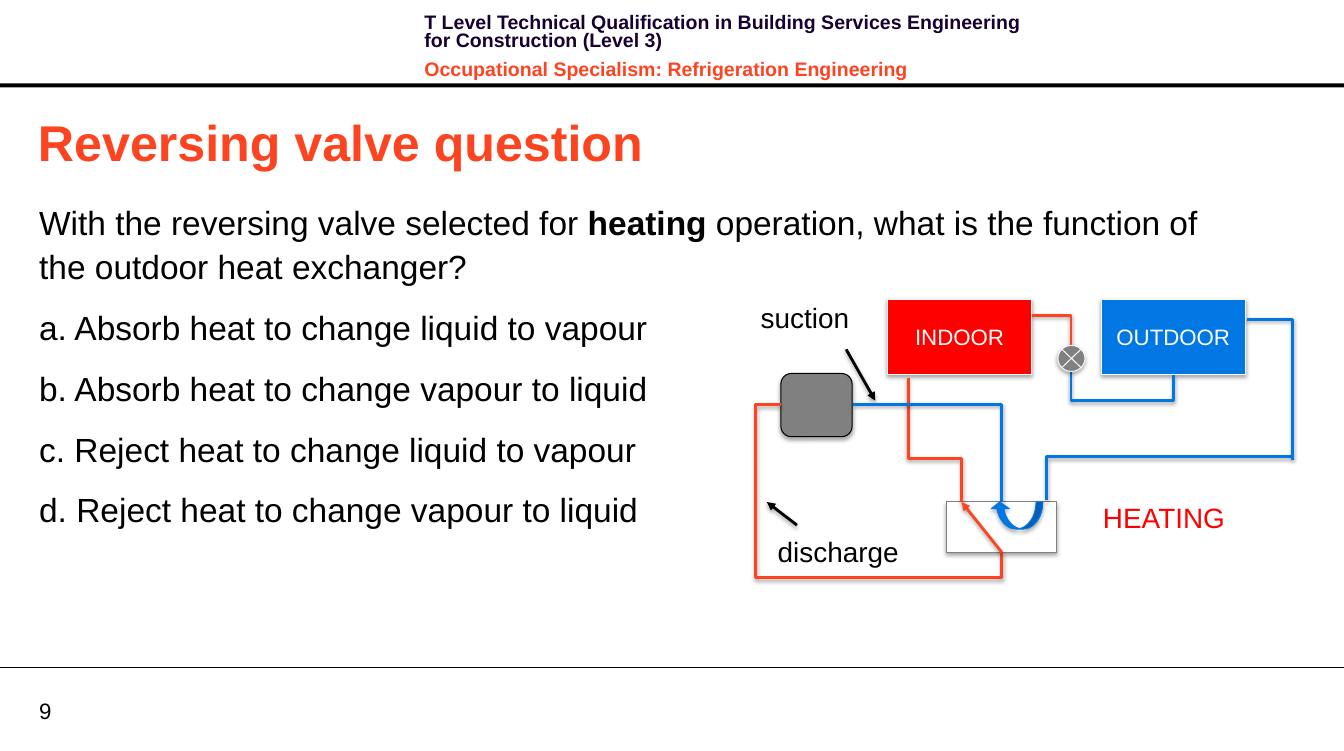
"""Build the reversing valve question slide with its heating circuit diagram."""
from lxml.etree import SubElement
from pptx import Presentation
from pptx.dml.color import RGBColor
from pptx.enum.shapes import MSO_CONNECTOR as Connector, MSO_SHAPE as Shape
from pptx.enum.text import MSO_ANCHOR as Anchor, PP_ALIGN as Align
from pptx.oxml.ns import qn
from pptx.util import Pt

PX = 9144
SLIDE_SIZE = (1339, 748)

THEME = {
    "font": "Arial",
    "colours": {
        "black": "000000", "white": "FFFFFF", "navy": "170130", "orange": "FC4421",
        "blue": "0077E3", "red": "FF0000", "grey": "808080", "pale": "F9F9F9",
    },
    "sizes": {"header": 14, "small": 16, "label": 20, "body": 24, "title": 36},
    "widths": {"thin": 0.75, "pipe": 2},
}

FLUSH = dict.fromkeys(("margin_left", "margin_top", "margin_right", "margin_bottom"), 0)
MIDDLE = {"vertical_anchor": Anchor.MIDDLE}
WRAP = {"word_wrap": True}
HEADER_LINE = {"line_spacing": Pt(13.1), "space_after": Pt(4)}
BODY_LINE = {"line_spacing": 1.1, "space_after": Pt(12)}

QUESTION = [
    [("With the reversing valve selected for ", False), ("heating", True),
     (" operation, what is the function of the outdoor heat exchanger?", False)],
    [("a. Absorb heat to change liquid to vapour", False)],
    [("b. Absorb heat to change vapour to liquid", False)],
    [("c. Reject heat to change liquid to vapour", False)],
    [("d. Reject heat to change vapour to liquid", False)],
]
HEADER = [
    ("T Level Technical Qualification in Building Services Engineering "
     "for Construction (Level 3)", "navy", HEADER_LINE),
    ("Occupational Specialism: Refrigeration Engineering", "orange",
     {**HEADER_LINE, "space_before": Pt(4)}),
]
TEXTS = [
    ((413, 10, 630, 64), WRAP, "header",
     [([(words, True)], colour, layout) for words, colour, layout in HEADER]),
    ((39, 694, 64, 27), {**WRAP, **MIDDLE, **FLUSH}, "small", [([("9", False)], "black", {})]),
    ((28, 105, 1272, 71), {**WRAP, **MIDDLE}, "title",
     [([("Reversing valve question", True)], "orange", {})]),
    ((39, 197, 1209, 396), {**WRAP, **FLUSH}, "body",
     [(runs, "black", BODY_LINE) for runs in QUESTION]),
]
LABELS = [
    ("suction", (748, 295, 109, 44), "black"),
    ("discharge", (765, 528, 142, 44), "black"),
    ("HEATING", (1089, 494, 143, 44), "red"),
]
EXCHANGERS = [("INDOOR", 884, "red"), ("OUTDOOR", 1097, "blue")]
EXCHANGER_TOP, EXCHANGER_WIDTH, EXCHANGER_HEIGHT = 298, 144, 75
VALVE = (943, 500, 110, 50)
COMPRESSOR = (778, 372, 71, 63)
EXPANSION_VALVE = (1054, 344, 27, 26)
VALVE_SLIDE = (987, 500, 52, 27)
SLIDE_BEND = (0.25, 0.666, 0.25)
PIPES = [
    ("orange", [(778, 403), (753, 403), (753, 575), (998, 575), (998, 550)]),
    ("blue", [(1287, 455), (1043, 455), (1043, 498)]),
    ("orange", [(905, 377), (905, 457), (958, 457), (958, 500)]),
    ("blue", [(850, 403), (998, 403), (998, 500)]),
    ("blue", [(1242, 318), (1288, 318), (1288, 458)]),
    ("orange", [(1067, 344), (1067, 314), (1028, 314)]),
    ("blue", [(1169, 374), (1169, 399), (1067, 399), (1067, 370)]),
]
POINTERS = [((794, 523), (764, 500)), ((843, 348), (872, 399))]
VALVE_FLOW = ((998, 550), (958, 500))
HEADER_BAR = (0, 83, SLIDE_SIZE[0], 4)
FOOTER_RULE = ((0, 665), (SLIDE_SIZE[0], 665))


def emu(lengths):
    return [round(length * PX) for length in lengths]


def colour_of(name):
    return RGBColor.from_string(THEME["colours"][name])


def apply(target, formats):
    for name, value in formats.items():
        setattr(target, name, value)


def write(frame, paragraphs, size):
    for index, (runs, colour, layout) in enumerate(paragraphs):
        paragraph = frame.add_paragraph() if index else frame.paragraphs[0]
        apply(paragraph, layout)
        for words, bold in runs:
            run = paragraph.add_run()
            run.text = words
            apply(run.font, {"name": THEME["font"], "bold": bold,
                             "size": Pt(THEME["sizes"][size])})
            run.font.color.rgb = colour_of(colour)


def add_text(slide, box, frame_format, size, paragraphs):
    frame = slide.shapes.add_textbox(*emu(box)).text_frame
    apply(frame, frame_format)
    write(frame, paragraphs, size)


def draw_line(line, colour, width):
    line.color.rgb = colour_of(colour)
    line.width = Pt(THEME["widths"][width])


def cast_shadow(effects, distance, opacity):
    shadow = SubElement(effects, qn("a:outerShdw"), blurRad="40000", dist=str(distance),
                        dir="5400000", rotWithShape="0")
    black = SubElement(shadow, qn("a:srgbClr"), val=THEME["colours"]["black"])
    SubElement(black, qn("a:alpha"), val=str(opacity * 1000))


def shade(shape, distance, opacity):
    shape.shadow.inherit = False
    cast_shadow(shape._element.spPr.find(qn("a:effectLst")), distance, opacity)


def add_part(slide, kind, box, fill, outline):
    part = slide.shapes.add_shape(kind, *emu(box))
    part.fill.solid()
    part.fill.fore_color.rgb = colour_of(fill)
    draw_line(part.line, outline, "thin")
    shade(part, 23000, 35)
    return part


def add_pipe(slide, colour, points):
    builder = slide.shapes.build_freeform(*points[0], scale=PX)
    builder.add_line_segments(points[1:], close=False)
    pipe = builder.convert_to_shape()
    pipe.fill.background()
    draw_line(pipe.line, colour, "pipe")
    shade(pipe, 20000, 38)


def add_line(slide, ends, colour, width, arrow=True):
    start, end = ends
    line = slide.shapes.add_connector(Connector.STRAIGHT, *emu(start + end))
    draw_line(line.line, colour, width)
    effects = SubElement(line._element.spPr, qn("a:effectLst"))
    if arrow:
        SubElement(line.line._get_or_add_ln(), qn("a:tailEnd"), type="triangle")
        cast_shadow(effects, 20000, 38)
    return line


def add_circuit(slide):
    for name, left, colour in EXCHANGERS:
        box = (left, EXCHANGER_TOP, EXCHANGER_WIDTH, EXCHANGER_HEIGHT)
        frame = add_part(slide, Shape.RECTANGLE, box, colour, "pale").text_frame
        apply(frame, MIDDLE)
        write(frame, [([(name, False)], "white", {"alignment": Align.CENTER})], "small")
    valve = add_part(slide, Shape.RECTANGLE, VALVE, "white", "grey")
    add_part(slide, Shape.FLOWCHART_ALTERNATE_PROCESS, COMPRESSOR, "grey", "black")
    for colour, points in PIPES:
        add_pipe(slide, colour, points)
    add_part(slide, Shape.FLOWCHART_SUMMING_JUNCTION, EXPANSION_VALVE, "grey", "pale")
    valve_slide = add_part(slide, Shape.CURVED_UP_ARROW, VALVE_SLIDE, "blue", "blue")
    for index, bend in enumerate(SLIDE_BEND):
        valve_slide.adjustments[index] = bend
    valve_slide._element.spPr.find(qn("a:xfrm")).set("flipH", "1")
    add_line(slide, VALVE_FLOW, "orange", "pipe").begin_connect(valve, 2)


def main():
    deck = Presentation()
    deck.slide_width, deck.slide_height = emu(SLIDE_SIZE)
    slide = deck.slides.add_slide(deck.slide_layouts[6])
    bar = slide.shapes.add_shape(Shape.RECTANGLE, *emu(HEADER_BAR))
    bar.fill.solid()
    bar.fill.fore_color.rgb = colour_of("black")
    bar.line.fill.background()
    bar.shadow.inherit = False
    add_line(slide, FOOTER_RULE, "black", "thin", arrow=False)
    for text in TEXTS:
        add_text(slide, *text)
    for words, box, colour in LABELS:
        add_text(slide, box, {"word_wrap": False}, "label", [([(words, False)], colour, {})])
    for ends in POINTERS:
        add_line(slide, ends, "black", "pipe")
    add_circuit(slide)
    deck.save("out.pptx")


if __name__ == "__main__":
    main()
